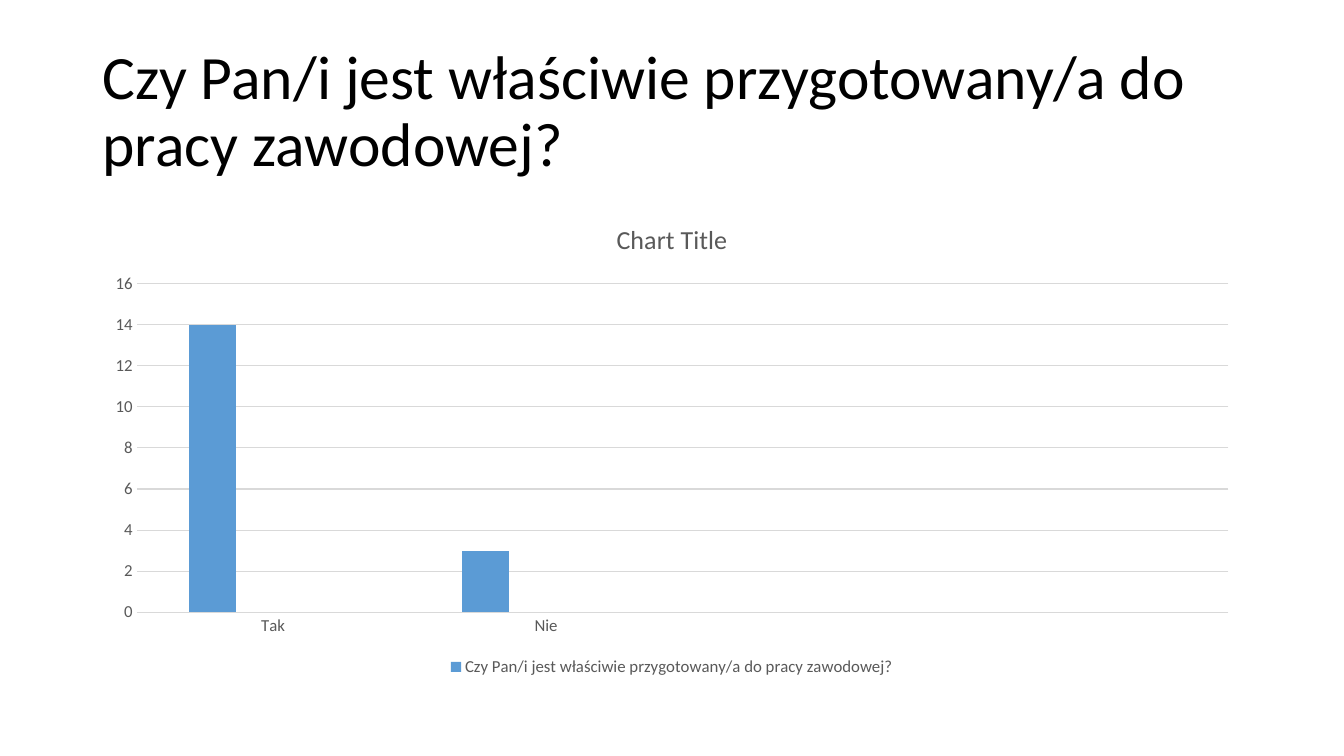
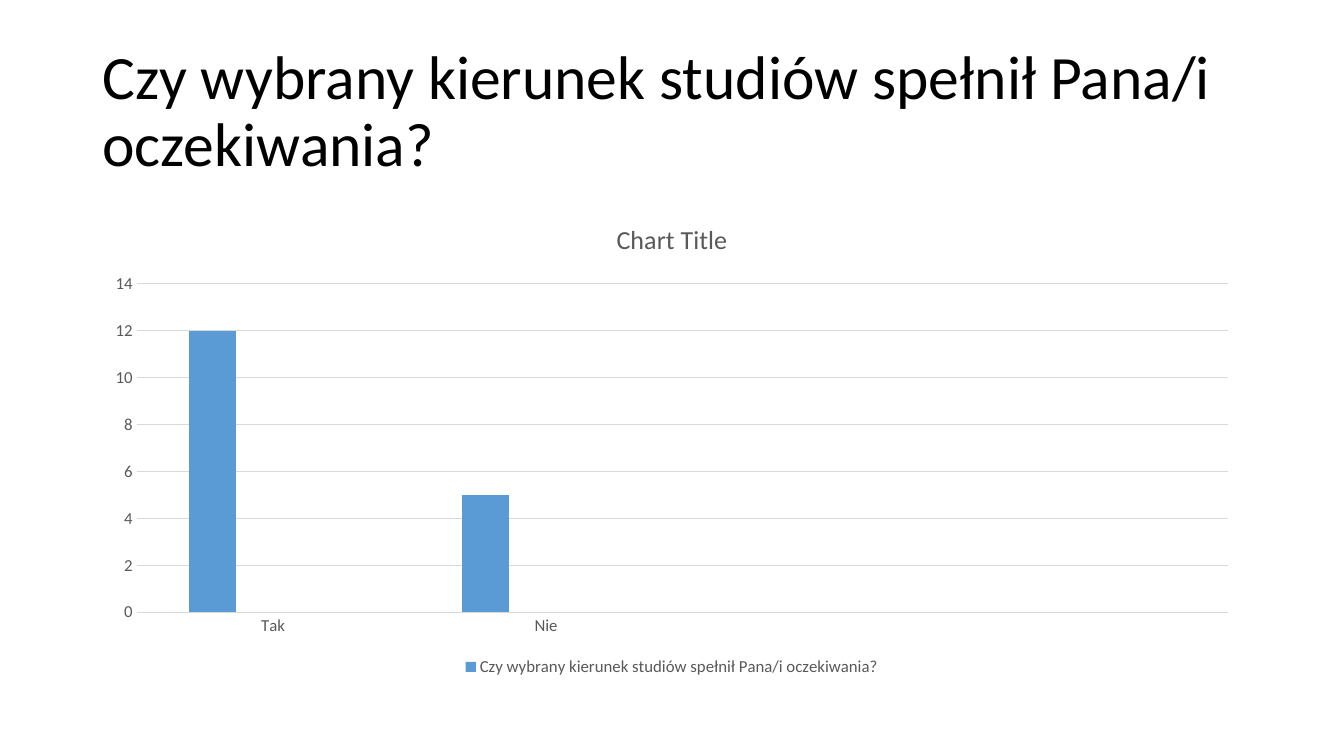
from lxml.etree import SubElement
from pptx import Presentation
from pptx.chart.data import CategoryChartData
from pptx.dml.color import RGBColor
from pptx.enum.chart import XL_CHART_TYPE, XL_LEGEND_POSITION, XL_TICK_MARK
from pptx.enum.text import MSO_ANCHOR, MSO_AUTO_SIZE, PP_ALIGN
from pptx.oxml.ns import qn
from pptx.util import Cm, Pt

HUES = {"ink": "000000", "grey": "595959", "grid": "D9D9D9",
        "blue": "5B9BD5", "warm": "ED7D31", "ash": "A5A5A5"}
FACE = "Calibri"
LEFT, WIDE = Cm(2.33), Cm(29.21)
POLLS = [
    ("Czy Pan/i jest właściwie przygotowany/a do pracy zawodowej?", (14, 3)),
    ("Czy wybrany kierunek studiów spełnił Pana/i oczekiwania?", (12, 5)),
]


def hue(name):
    """Return the named colour."""
    return RGBColor.from_string(HUES[name])


def style(font, size, name="grey"):
    """Set face, size, weight and colour of a font."""
    font.name, font.size, font.bold = FACE, Pt(size), False
    font.color.rgb = hue(name)


def rule(line):
    """Draw a line in the thin grid style."""
    line.color.rgb = hue("grid")
    line.width = Pt(0.75)


def add_run(para, text, size, name):
    """Add one styled run to a paragraph."""
    run = para.add_run()
    run.text = text
    style(run.font, size, name)


def add_title(slide, text):
    """Place and fill the title of a slide."""
    title = slide.shapes.title
    title.left, title.top, title.width, title.height = LEFT, Cm(1.01), WIDE, Cm(3.68)
    frame = title.text_frame
    frame.word_wrap = True
    frame.auto_size = MSO_AUTO_SIZE.NONE
    frame.vertical_anchor = MSO_ANCHOR.MIDDLE
    para = frame.paragraphs[0]
    para.alignment = PP_ALIGN.LEFT
    para.line_spacing = 0.9
    add_run(para, text, 44, "ink")


def set_axes(chart):
    """Style both axes and the grid."""
    for axis in (chart.category_axis, chart.value_axis):
        axis.major_tick_mark = axis.minor_tick_mark = XL_TICK_MARK.NONE
        style(axis.tick_labels.font, 12)
    rule(chart.category_axis.format.line)
    chart.value_axis.format.line.fill.background()
    chart.value_axis.has_major_gridlines = True
    rule(chart.value_axis.major_gridlines.format.line)


def set_legend(chart, hidden):
    """Put the legend below and hide some of its entries."""
    chart.has_legend = True
    legend = chart.legend
    legend.position = XL_LEGEND_POSITION.BOTTOM
    legend.include_in_layout = False
    style(legend.font, 12)
    mark = legend._element.find(qn("c:legendPos"))
    for index in reversed(hidden):
        entry = legend._element.makeelement(qn("c:legendEntry"))
        SubElement(entry, qn("c:idx")).set("val", str(index))
        SubElement(entry, qn("c:delete")).set("val", "1")
        mark.addnext(entry)


def add_bars(slide, name, vals):
    """Add the column chart of one poll."""
    data = CategoryChartData()
    data.categories = ["Tak", "Nie", "", ""]
    data.add_series(name, [*vals, None, None])
    for label in ("Series 2", "Series 3"):
        data.add_series(label, [None] * 4)
    chart = slide.shapes.add_chart(
        XL_CHART_TYPE.COLUMN_CLUSTERED, LEFT, Cm(5.07), WIDE, Cm(12.09), data).chart
    style(chart.font, 10, "ink")
    chart.has_title = True
    add_run(chart.chart_title.text_frame.paragraphs[0], "Chart Title", 18.6, "grey")
    chart.chart_title.include_in_layout = False
    plot = chart.plots[0]
    plot.gap_width, plot.overlap = 219, -27
    plot.vary_by_categories = False
    for series, tint in zip(plot.series, ("blue", "warm", "ash")):
        series.format.fill.solid()
        series.format.fill.fore_color.rgb = hue(tint)
    set_axes(chart)
    set_legend(chart, (1, 2))


def main():
    """Build and save the deck."""
    deck = Presentation()
    deck.slide_width, deck.slide_height = Cm(33.87), Cm(19.05)
    for text, vals in POLLS:
        slide = deck.slides.add_slide(deck.slide_layouts[5])
        add_title(slide, text)
        add_bars(slide, text, vals)
    deck.save("out.pptx")


if __name__ == "__main__":
    main()
